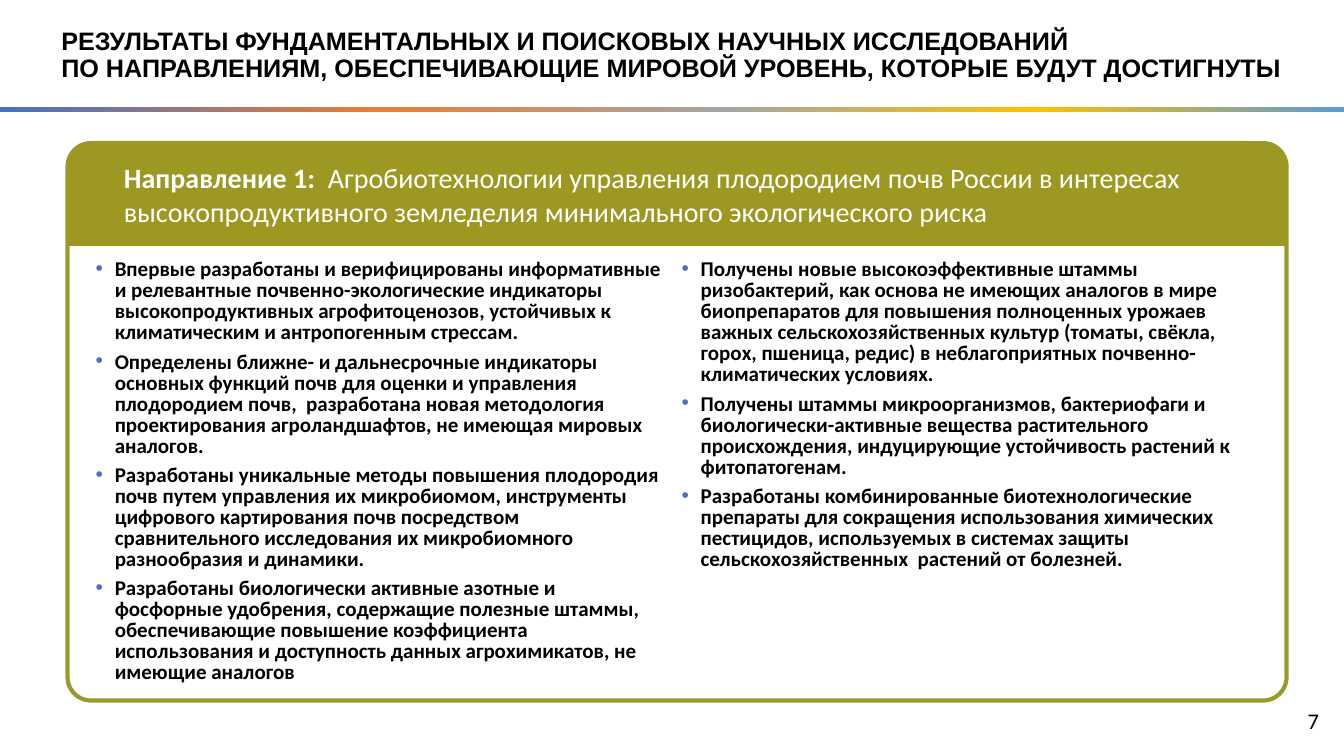
from dataclasses import dataclass

from lxml import etree
from pptx import Presentation
from pptx import util as u
from pptx.dml.color import RGBColor
from pptx.enum import shapes, text
from pptx.oxml import ns


@dataclass(frozen=True)
class Theme:
    black: str = "000000"
    white: str = "FFFFFF"
    border: str = "9A9A28"
    banner: str = "9C9822"
    bullet: str = "4472C4"
    rainbow: tuple = ((0, "4472C4"), (28, "ED7D31"), (54, "A5A5A5"),
                      (77, "FFC000"), (100, "5B9BD5"))
    title_font: str = "Arial"
    body_font: str = "Calibri"
    title_size: int = 18
    banner_size: int = 20
    body_size: int = 15
    number_size: int = 16


def add_xml(parent, tag, **attributes):
    return etree.SubElement(parent, ns.qn(tag), attributes)


class SlideBuilder:
    def __init__(self, slide, theme):
        self.slide = slide
        self.theme = theme

    def shape(self, kind, box, fill=None, line=None, line_width=3, corner=None):
        item = self.slide.shapes.add_shape(kind, *map(u.Inches, box))
        item.shadow.inherit = False
        if corner is not None:
            item.adjustments[0] = corner
        if fill:
            item.fill.solid()
            item.fill.fore_color.rgb = RGBColor.from_string(fill)
        else:
            item.fill.background()
        if line:
            item.line.color.rgb = RGBColor.from_string(line)
            item.line.width = u.Pt(line_width)
        else:
            item.line.fill.background()
        return item

    def gradient_bar(self, box, stops):
        bar = self.shape(shapes.MSO_SHAPE.RECTANGLE, box)
        bar.fill.gradient()
        bar.fill.gradient_angle = 0
        stop_list = bar.fill._fill._gradFill.find(ns.qn("a:gsLst"))
        for old_stop in list(stop_list):
            stop_list.remove(old_stop)
        for percent, color in stops:
            stop = add_xml(stop_list, "a:gs", pos=str(percent * 1000))
            add_xml(stop, "a:srgbClr", val=color)

    def frame(self, box, anchor):
        frame = self.slide.shapes.add_textbox(*map(u.Inches, box)).text_frame
        frame.word_wrap = True
        frame.vertical_anchor = anchor
        return frame

    def style(self, font, size, color, name=None, bold=None):
        font.name = name or self.theme.body_font
        font.size = u.Pt(size)
        font.bold = bold
        font.color.rgb = RGBColor.from_string(color)

    def label(self, box, words, size, color, name=None, bold=None,
              align=text.PP_ALIGN.LEFT, spacing=None):
        paragraph = self.frame(box, text.MSO_ANCHOR.MIDDLE).paragraphs[0]
        paragraph.text = words
        paragraph.alignment = align
        paragraph.line_spacing = spacing
        self.style(paragraph.font, size, color, name, bold)

    def lead_in(self, box, lead, rest, size, color):
        paragraph = self.frame(box, text.MSO_ANCHOR.MIDDLE).paragraphs[0]
        self.style(paragraph.font, size, color)
        for words, bold in ((lead, True), (rest, False)):
            run = paragraph.add_run()
            run.text = words
            run.font.bold = bold

    def bullet_columns(self, box, items, columns, gap, indent):
        frame = self.frame(box, text.MSO_ANCHOR.TOP)
        body = frame._txBody.bodyPr
        body.set("numCol", str(columns))
        body.set("spcCol", str(u.Inches(gap)))
        for index, words in enumerate(items):
            paragraph = frame.add_paragraph() if index else frame.paragraphs[0]
            paragraph.text = words
            paragraph.line_spacing = u.Pt(15)
            paragraph.space_after = u.Pt(6)
            properties = paragraph._p.get_or_add_pPr()
            properties.set("marL", str(u.Inches(indent)))
            properties.set("indent", str(-u.Inches(indent)))
            bullet_color = add_xml(properties, "a:buClr")
            add_xml(bullet_color, "a:srgbClr", val=self.theme.bullet)
            add_xml(properties, "a:buFont", typeface="Arial")
            add_xml(properties, "a:buChar", char="•")
            self.style(paragraph.font, self.theme.body_size, self.theme.black,
                       bold=True)


RESULTS = (
    "Впервые разработаны и верифицированы информативные и релевантные "
    "почвенно-экологические индикаторы высокопродуктивных агрофитоценозов, "
    "устойчивых к климатическим и антропогенным стрессам.",
    "Определены ближне- и дальнесрочные индикаторы основных функций почв для "
    "оценки и управления плодородием почв,  разработана новая методология "
    "проектирования агроландшафтов, не имеющая мировых  аналогов.",
    "Разработаны уникальные методы повышения плодородия почв путем управления "
    "их микробиомом, инструменты цифрового картирования почв посредством "
    "сравнительного исследования их микробиомного разнообразия и динамики.",
    "Разработаны биологически активные азотные и фосфорные удобрения, "
    "содержащие полезные штаммы, обеспечивающие повышение коэффициента "
    "использования и доступность данных агрохимикатов, не имеющие аналогов",
    "Получены новые высокоэффективные штаммы ризобактерий, как основа не "
    "имеющих аналогов в мире биопрепаратов для повышения полноценных урожаев "
    "важных сельскохозяйственных культур (томаты, свёкла, горох, пшеница, "
    "редис) в неблагоприятных почвенно-климатических условиях.",
    "Получены штаммы микроорганизмов, бактериофаги и биологически-активные "
    "вещества растительного происхождения, индуцирующие устойчивость растений "
    "к  фитопатогенам.",
    "Разработаны комбинированные биотехнологические препараты для сокращения "
    "использования химических пестицидов, используемых в системах защиты "
    "сельскохозяйственных  растений от болезней.",
)


def main():
    deck = Presentation()
    deck.slide_width, deck.slide_height = u.Inches(13.33), u.Inches(7.5)
    theme = Theme()
    builder = SlideBuilder(deck.slides.add_slide(deck.slide_layouts[6]), theme)

    # Title, page number and divider
    builder.label(
        (0.51, 0, 12.34, 1.11),
        "РЕЗУЛЬТАТЫ ФУНДАМЕНТАЛЬНЫХ И ПОИСКОВЫХ НАУЧНЫХ ИССЛЕДОВАНИЙ \v"
        "ПО НАПРАВЛЕНИЯМ, ОБЕСПЕЧИВАЮЩИЕ МИРОВОЙ УРОВЕНЬ, КОТОРЫЕ БУДУТ ДОСТИГНУТЫ",
        theme.title_size, theme.black, theme.title_font, True, spacing=0.9)
    builder.label((10.18, 6.95, 3, 0.4), "7", theme.number_size, theme.black,
                  align=text.PP_ALIGN.RIGHT)
    builder.gradient_bar((0, 1.06, 13.33, 0.05), theme.rainbow)

    # Card with the results
    left, top, width = 0.67, 1.42, 12.09
    builder.shape(shapes.MSO_SHAPE.ROUNDED_RECTANGLE, (left, top, width, 5.53),
                  line=theme.border, corner=0.042)
    builder.bullet_columns((0.85, 2.53, 11.66, 4.36), RESULTS,
                           columns=2, gap=0.16, indent=0.19)

    # Card banner
    builder.shape(shapes.MSO_SHAPE.ROUND_2_SAME_RECTANGLE,
                  (left, top, width, 1.02), fill=theme.banner, corner=0.23)
    builder.lead_in(
        (1.13, 1.54, 11.38, 0.77), "Направление 1:  ",
        "Агробиотехнологии управления плодородием почв России в интересах "
        "высокопродуктивного земледелия минимального экологического риска",
        theme.banner_size, theme.white)

    deck.save("out.pptx")


if __name__ == "__main__":
    main()
